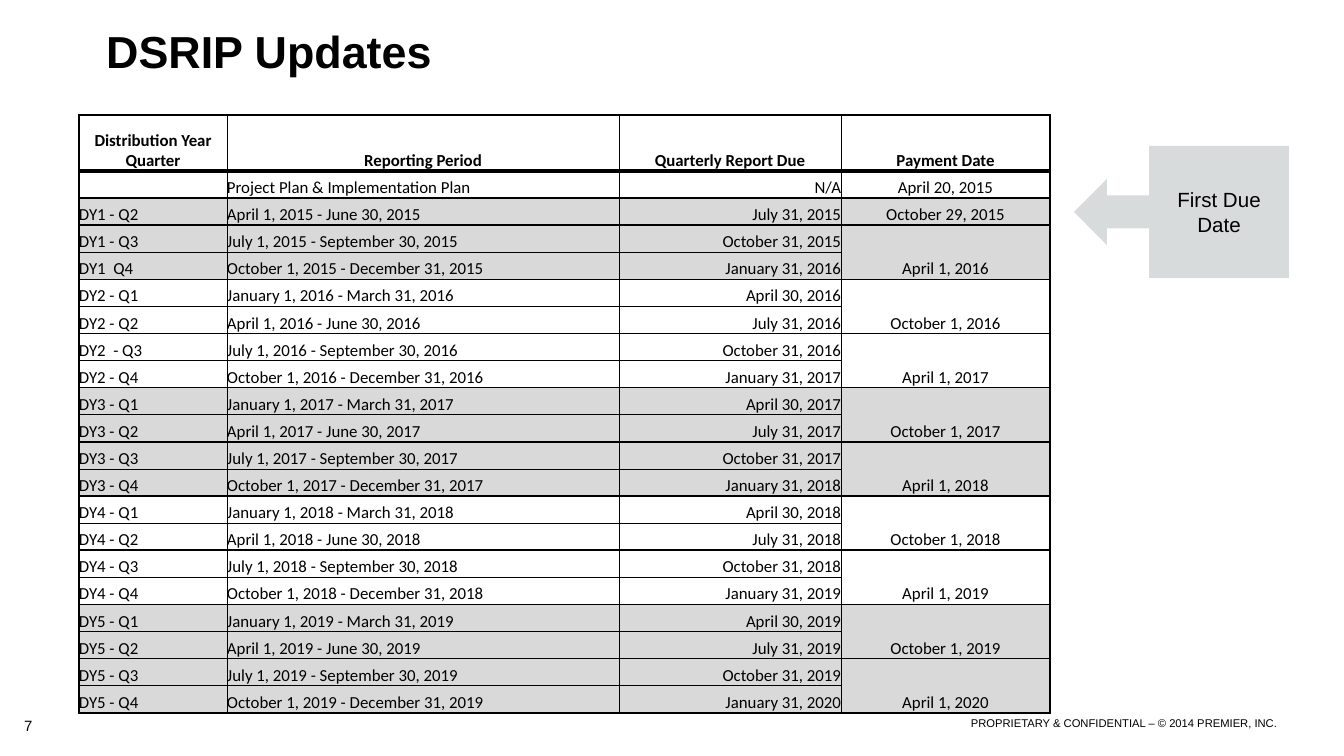
from dataclasses import dataclass

from lxml import etree
from pptx import Presentation
from pptx.dml.color import RGBColor
from pptx.enum.shapes import MSO_SHAPE
from pptx.enum.text import MSO_ANCHOR, PP_ALIGN
from pptx.oxml.ns import qn
from pptx.util import Emu, Pt

LEFT, CENTER, RIGHT = PP_ALIGN.LEFT, PP_ALIGN.CENTER, PP_ALIGN.RIGHT
TOP, MIDDLE, BOTTOM = MSO_ANCHOR.TOP, MSO_ANCHOR.MIDDLE, MSO_ANCHOR.BOTTOM
ARROW_CALLOUT = MSO_SHAPE.LEFT_ARROW_CALLOUT
EMU_PER_PX = 914400 / 134.4


@dataclass(frozen=True)
class Theme:
    ink: str = "000000"
    band: str = "D9D9D9"
    callout: str = "D8DBDB"
    font: str = "Arial"
    table_font: str = "Calibri"
    title_size: int = 24
    callout_size: int = 11
    table_size: int = 9
    page_size: int = 8
    footer_size: int = 6
    thin: float = 0.5
    medium: float = 1
    thick: float = 2


THEME = Theme()

HEADINGS = ["Distribution Year\nQuarter", "Reporting Period",
            "Quarterly Report Due", "Payment Date"]
COLUMN_WIDTHS = [148, 392, 222, 209]
COLUMN_ALIGNS = [LEFT, LEFT, RIGHT, CENTER]
HEADER_HEIGHT = 56
# First day, last day, report due
QUARTERS = {1: ("January 1", "March 31", "April 30"),
            2: ("April 1", "June 30", "July 31"),
            3: ("July 1", "September 30", "October 31"),
            4: ("October 1", "December 31", "January 31")}
ODD_LABELS = {(1, 4): "DY1  Q4", (2, 3): "DY2  - Q3"}
SHADED_YEARS = {1, 3, 5}


def px(length):
    return Emu(round(length * EMU_PER_PX))


def write_text(frame, text, size, align=LEFT, anchor=TOP, bold=False,
               font=THEME.font):
    frame.word_wrap = True
    frame.vertical_anchor = anchor
    para = frame.paragraphs[0]
    para.alignment = align
    for index, line in enumerate(text.split("\n")):
        if index:
            para.add_line_break()
        span = para.add_run()
        span.text = line
        span.font.name = font
        span.font.size = Pt(size)
        span.font.bold = bold
        span.font.color.rgb = RGBColor.from_string(THEME.ink)


def add_text(page, box, text, size, **style):
    shape = page.shapes.add_textbox(*map(px, box))
    write_text(shape.text_frame, text, size, **style)


def schedule_rows():
    """Return (shaded, texts) pairs; an open payment has the text None."""
    rows = [(False, ["", "Project Plan & Implementation Plan", "N/A",
                     "April 20, 2015"])]
    for dist_year in range(1, 6):
        year = 2014 + dist_year
        for quarter, (start, end, due) in QUARTERS.items():
            if (dist_year, quarter) == (1, 1):
                continue
            late = year + quarter // 4
            payment = {2: f"October 1, {year}", 4: f"April 1, {late}"}.get(quarter)
            if (dist_year, quarter) == (1, 2):
                payment = "October 29, 2015"
            label = ODD_LABELS.get((dist_year, quarter),
                                   f"DY{dist_year} - Q{quarter}")
            rows.append((dist_year in SHADED_YEARS, [
                label, f"{start}, {year} - {end}, {year}",
                f"{due}, {late}", payment]))
    return rows


def set_borders(cell, left, right, top, bottom):
    props = cell._tc.get_or_add_tcPr()
    edges = [("a:lnL", left), ("a:lnR", right), ("a:lnT", top), ("a:lnB", bottom)]
    for index, (tag, width) in enumerate(edges):
        line = etree.Element(qn(tag), w=str(Pt(width)))
        fill = etree.SubElement(line, qn("a:solidFill"))
        etree.SubElement(fill, qn("a:srgbClr"), val=THEME.ink)
        props.insert(index, line)


def style_cell(cell, text, align, shaded, bold):
    cell.margin_left = cell.margin_right = 0
    cell.margin_top = cell.margin_bottom = 0
    cell.vertical_anchor = BOTTOM
    if shaded:
        cell.fill.solid()
        cell.fill.fore_color.rgb = RGBColor.from_string(THEME.band)
    else:
        cell.fill.background()
    if text:
        write_text(cell.text_frame, text, THEME.table_size, align, BOTTOM,
                   bold, THEME.table_font)
    else:
        # Keeps an empty cell from stretching its row
        etree.SubElement(cell.text_frame.paragraphs[0]._p, qn("a:endParaRPr"),
                         sz=str(THEME.table_size * 100))


def add_schedule(page, box):
    rows = [(False, HEADINGS)] + schedule_rows()
    table = page.shapes.add_table(len(rows), len(HEADINGS), *map(px, box)).table
    table.first_row = table.horz_banding = False
    for column, width in zip(table.columns, COLUMN_WIDTHS):
        column.width = px(width)
    row_height = (box[3] - HEADER_HEIGHT) / (len(rows) - 1)
    last = len(HEADINGS) - 1
    above = THEME.medium
    for r, (shaded, texts) in enumerate(rows):
        header = r == 0
        table.rows[r].height = px(HEADER_HEIGHT if header else row_height)
        opens_pair = texts[last] is None
        closes_pair = rows[r - 1][1][last] is None
        below = THEME.thick if header else THEME.thin if opens_pair else THEME.medium
        if opens_pair:
            table.cell(r, last).merge(table.cell(r + 1, last))
        for c, text in enumerate(texts):
            cell = table.cell(r, c)
            top, bottom = above, below
            if c == last:
                # A merged payment cell takes its text from the second row
                text = rows[r + 1][1][c] if opens_pair else "" if closes_pair else text
                top = THEME.medium if closes_pair else above
                bottom = THEME.medium if opens_pair else below
            align = CENTER if header else COLUMN_ALIGNS[c]
            style_cell(cell, text, align, shaded, header)
            set_borders(cell, THEME.medium if c == 0 else THEME.thin,
                        THEME.medium if c == last else THEME.thin, top, bottom)
        above = below


def add_callout(page, box):
    callout = page.shapes.add_shape(ARROW_CALLOUT, *map(px, box))
    callout.shadow.inherit = False
    callout.fill.solid()
    callout.fill.fore_color.rgb = RGBColor.from_string(THEME.callout)
    callout.line.fill.background()
    write_text(callout.text_frame, "First Due Date", THEME.callout_size,
               CENTER, MIDDLE)


def add_footer(page, box):
    left, top, width, height = box
    add_text(page, (left, top, 56, height), "7", THEME.page_size)
    add_text(page, (left + width - 340, top, 340, 27),
             "PROPRIETARY & CONFIDENTIAL – © 2014 PREMIER, INC.",
             THEME.footer_size, align=RIGHT)


def main():
    deck = Presentation()
    deck.slide_width, deck.slide_height = px(1344), px(756)
    page = deck.slides.add_slide(deck.slide_layouts[6])
    # Footer and title
    add_footer(page, (11, 710, 1279, 46))
    add_text(page, (93, 15, 1210, 71), "DSRIP Updates", THEME.title_size,
             anchor=MIDDLE, bold=True)
    # Schedule and its pointer
    add_schedule(page, (79, 115, sum(COLUMN_WIDTHS), 598))
    add_callout(page, (1074, 146, 215, 132))
    deck.save("out.pptx")


if __name__ == "__main__":
    main()
